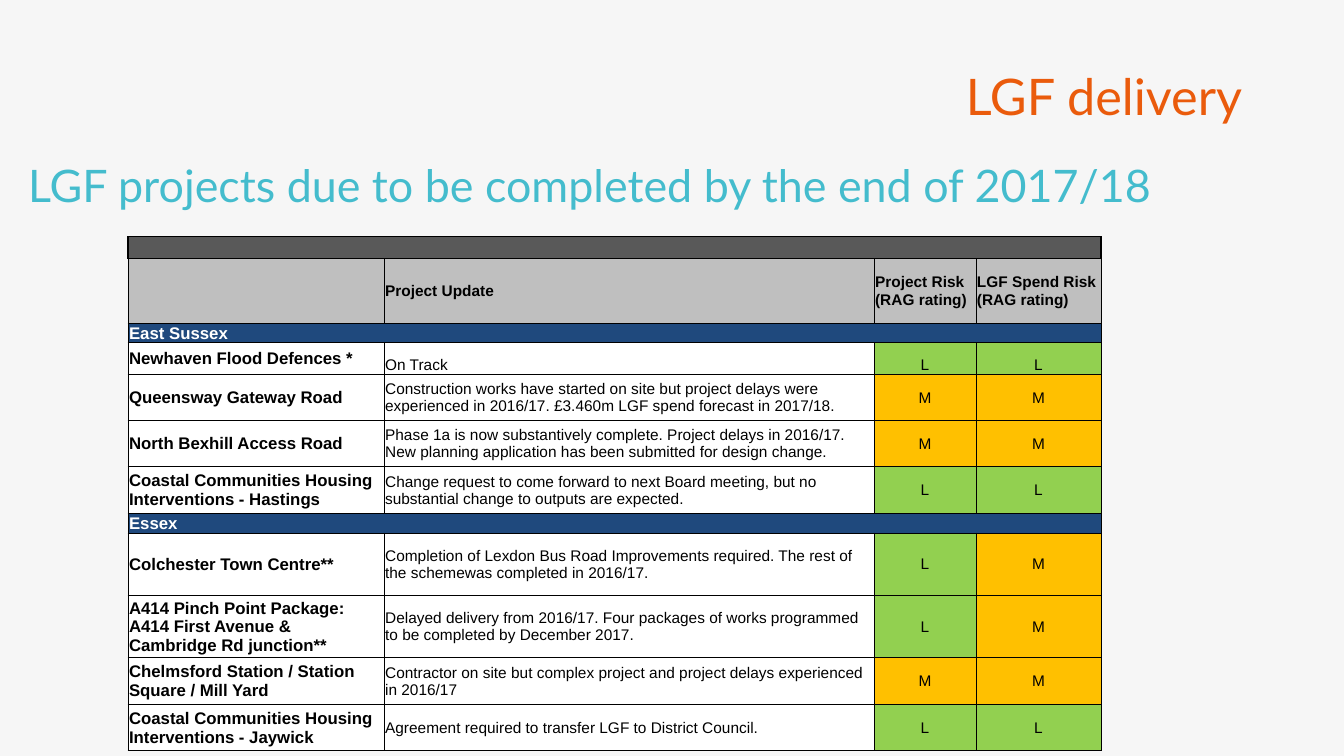
from lxml import etree
from pptx import Presentation
from pptx import util as u
from pptx.dml import color
from pptx.enum import text
from pptx.oxml import ns

W, H = 13.33, 7.5
COLS = [2.54, 4.86, 1.01, 1.24]
BLACK, WHITE, NAVY, GREY, DARK = "000000", "FFFFFF", "1F497D", "BFBFBF", "595959"
RAG = {"L": "92D050", "M": "FFC000"}
MIDDLE, BOTTOM = text.MSO_ANCHOR.MIDDLE, text.MSO_ANCHOR.BOTTOM
LEFT, CENTER, RIGHT = text.PP_ALIGN.LEFT, text.PP_ALIGN.CENTER, text.PP_ALIGN.RIGHT

ROWS = [
    (0.19, [""]),
    (0.64, ["", "Project Update", "Project Risk\v(RAG rating)", "LGF Spend Risk\v(RAG rating)"]),
    (0.19, ["East Sussex"]),
    (0.31, ["Newhaven Flood Defences *", "On Track", "L", "L"]),
    (0.46, ["Queensway Gateway Road",
            "Construction works have started on site but project delays were experienced "
            "in 2016/17. £3.460m LGF spend forecast in 2017/18.", "M", "M"]),
    (0.46, ["North Bexhill Access Road",
            "Phase 1a is now substantively complete. Project delays in 2016/17. "
            "New planning application has been submitted for design change.", "M", "M"]),
    (0.46, ["Coastal Communities Housing Interventions - Hastings",
            "Change request to come forward to next Board meeting, but no "
            "substantial change to outputs are expected.", "L", "L"]),
    (0.19, ["Essex"]),
    (0.62, ["Colchester Town Centre**",
            "Completion of Lexdon Bus Road Improvements required. The rest of "
            "the schemewas completed in 2016/17.", "L", "M"]),
    (0.62, ["A414 Pinch Point Package: A414 First Avenue & Cambridge Rd junction**",
            "Delayed delivery from 2016/17. Four packages of works programmed "
            "to be completed by December 2017.", "L", "M"]),
    (0.46, ["Chelmsford Station / Station Square / Mill Yard",
            "Contractor on site but complex project and project delays experienced "
            "in 2016/17", "M", "M"]),
    (0.46, ["Coastal Communities Housing Interventions - Jaywick",
            "Agreement required to transfer LGF to District Council.", "L", "L"]),
]


def rgb(value):
    return color.RGBColor.from_string(value)


def apply(target, values):
    for name, value in values.items():
        setattr(target, name, value)


def box(left, top, width, height):
    return dict(zip(("left", "top", "width", "height"),
                    map(u.Inches, (left, top, width, height))))


def write(p, words, size, font, ink, align=LEFT, bold=False):
    p.text = words
    p.alignment = align
    for r in p.runs:
        apply(r.font, {"size": u.Pt(size), "name": font, "bold": bold})
        r.font.color.rgb = rgb(ink)
    for br in p._p.findall(ns.qn("a:br")):
        etree.SubElement(br, ns.qn("a:rPr"), sz=str(size * 100))
    if not words:
        etree.SubElement(p._p, ns.qn("a:endParaRPr"), sz=str(size * 100))


def heading(sp, area, words, size, ink, align, anchor):
    apply(sp, area)
    tf = sp.text_frame
    apply(tf, {"word_wrap": True, "auto_size": text.MSO_AUTO_SIZE.NONE,
               "vertical_anchor": anchor})
    write(tf.paragraphs[0], words, size, "Lato", ink, align)
    tf.paragraphs[0].line_spacing = 0.9


def borders(cell, outer):
    tc_pr = cell._tc.get_or_add_tcPr()
    for side in "LRTB":
        width = 1 if outer and side != "B" else 0.5
        ln = etree.SubElement(tc_pr, ns.qn("a:ln" + side), w=str(u.Pt(width)))
        fill = etree.SubElement(ln, ns.qn("a:solidFill"))
        etree.SubElement(fill, ns.qn("a:srgbClr"), val=BLACK)


def cell_look(row, col, words, spans):
    if spans:
        return (DARK if row == 0 else NAVY), {"size": 12, "ink": WHITE, "bold": True}
    if row == 1:
        return GREY, {"size": 11, "ink": BLACK, "bold": True}
    if col == 0:
        return WHITE, {"size": 12, "ink": BLACK, "bold": True}
    align = CENTER if words in RAG else LEFT
    return RAG.get(words, WHITE), {"size": 11, "ink": BLACK, "align": align}


def project_table(s, left, top):
    heights = [height for height, _ in ROWS]
    area = box(left, top, sum(COLS), sum(heights))
    table = s.shapes.add_table(len(ROWS), len(COLS), **area).table
    apply(table, {"first_row": False, "horz_banding": False})
    for column, width in zip(table.columns, COLS):
        column.width = u.Inches(width)
    for i, (height, words) in enumerate(ROWS):
        table.rows[i].height = u.Inches(height)
        spans = len(words) == 1
        for j in range(len(COLS)):
            cell = table.cell(i, j)
            content = words[j] if j < len(words) else ""
            fill, look = cell_look(i, j, content, spans)
            low = words[0].startswith("Newhaven") and j > 0
            edge = u.Inches(0.01)
            apply(cell, {"margin_left": edge, "margin_right": edge, "margin_top": edge,
                         "margin_bottom": 0, "vertical_anchor": BOTTOM if low else MIDDLE})
            borders(cell, i == 0)
            cell.fill.solid()
            cell.fill.fore_color.rgb = rgb(fill)
            write(cell.text_frame.paragraphs[0], content, font="Arial", **look)
        if spans:
            table.cell(i, 0).merge(table.cell(i, len(COLS) - 1))


def delivery_slide(prs):
    s = prs.slides.add_slide(prs.slide_layouts[5])
    s.background.fill.solid()
    s.background.fill.fore_color.rgb = rgb("F6F6F6")
    heading(s.shapes.title, box(4.13, 0.61, 8.29, 0.74), "LGF delivery",
            36, "EA5B0C", RIGHT, MIDDLE)
    area = box(0.18, 1.58, 12.77, 0.57)
    heading(s.shapes.add_textbox(**area), area,
            "LGF projects due to be completed by the end of 2017/18",
            32, "44BCCD", LEFT, text.MSO_ANCHOR.TOP)
    project_table(s, 1.27, 2.35)


def main():
    prs = Presentation()
    apply(prs, {"slide_width": u.Inches(W), "slide_height": u.Inches(H)})
    delivery_slide(prs)
    prs.save("out.pptx")


if __name__ == "__main__":
    main()
